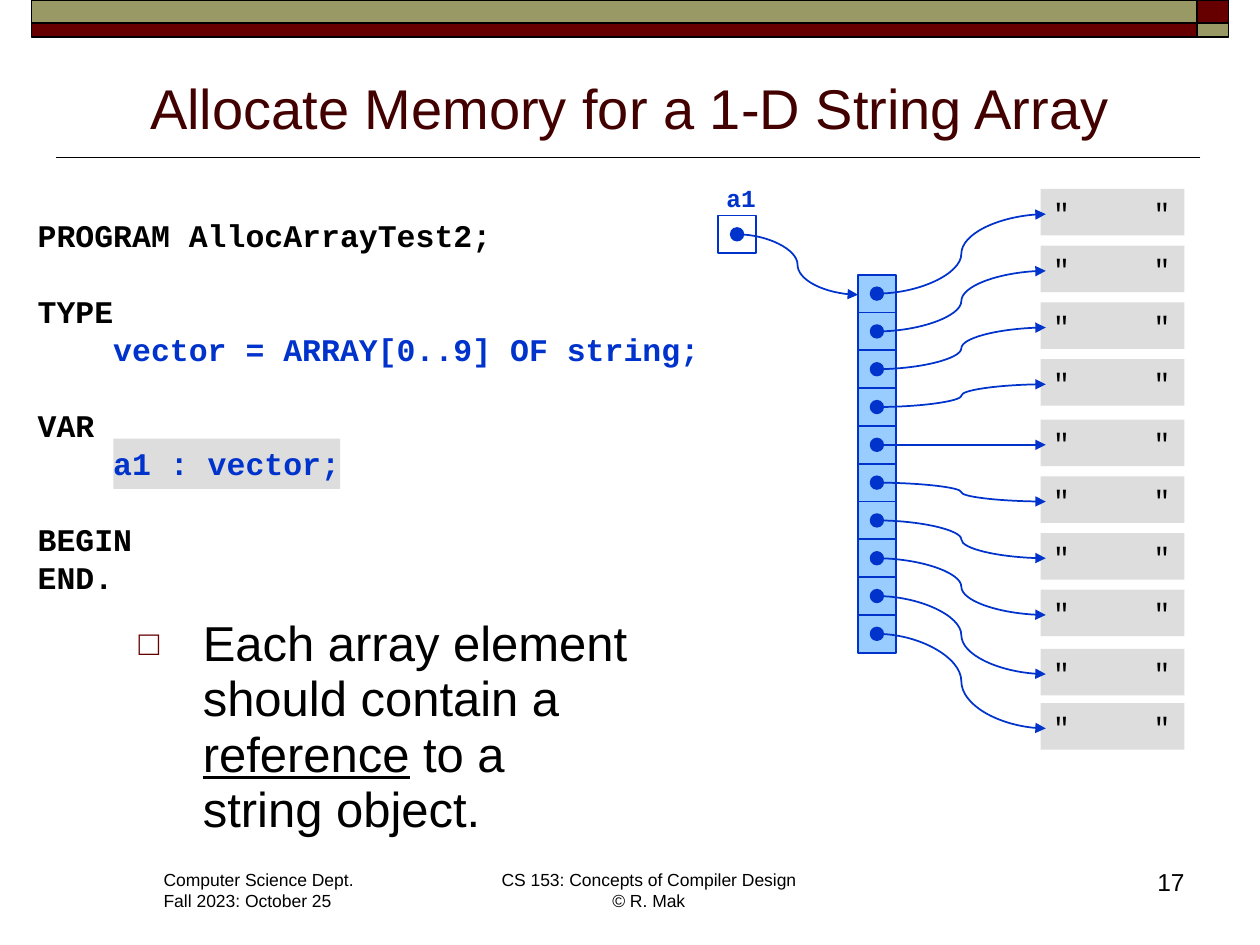
from lxml import etree
from pptx import Presentation
from pptx.dml.color import RGBColor
from pptx.enum.shapes import MSO_CONNECTOR, MSO_SHAPE
from pptx.enum.text import MSO_ANCHOR, MSO_AUTO_SIZE, PP_ALIGN
from pptx.oxml.ns import qn
from pptx.util import Pt

RECT, OVAL = MSO_SHAPE.RECTANGLE, MSO_SHAPE.OVAL
STRAIGHT, CURVE = MSO_CONNECTOR.STRAIGHT, MSO_CONNECTOR.CURVE
TOP, BOTTOM = MSO_ANCHOR.TOP, MSO_ANCHOR.BOTTOM
LEFT, CENTER, RIGHT = PP_ALIGN.LEFT, PP_ALIGN.CENTER, PP_ALIGN.RIGHT
NO_AUTOSIZE = MSO_AUTO_SIZE.NONE

SANS, MONO = "Arial", "Courier New"
BLACK, MAROON, DARK_MAROON, OLIVE = "000000", "660000", "420000", "999966"
BLUE, LIGHT_BLUE, GRAY = "0033CC", "99CCFF", "DDDDDD"

CELL = 21.6
DOT = 7.2
CODE_PITCH = 21.7

# Each statement line: indented, blank line above
CODE = [
    ("PROGRAM AllocArrayTest2;", False, False),
    ("TYPE", False, True),
    ("vector = ARRAY[0..9] OF string;", True, False),
    ("VAR", False, True),
    ("a1 : vector;", True, False),
    ("BEGIN", False, True),
    ("END.", False, False),
]


def rgb(color):
    return RGBColor.from_string(color)


def style_font(font, name, size, color, bold=False):
    font.name, font.size, font.bold = name, Pt(size), bold
    font.color.rgb = rgb(color)


def place(item, left, top, width, height):
    item.left, item.top = Pt(left), Pt(top)
    item.width, item.height = Pt(width), Pt(height)


def add_box(slide, kind, left, top, width, height, fill=None, line=None):
    box = slide.shapes.add_shape(kind, Pt(left), Pt(top), Pt(width), Pt(height))
    box.shadow.inherit = False
    if fill:
        box.fill.solid()
        box.fill.fore_color.rgb = rgb(fill)
    else:
        box.fill.background()
    if line:
        box.line.color.rgb = rgb(line)
        box.line.width = Pt(1)
    else:
        box.line.fill.background()
    return box


def add_line(slide, kind, start, end, color, arrow=False):
    line = slide.shapes.add_connector(kind, *(Pt(v) for v in (*start, *end)))
    line.line.color.rgb = rgb(color)
    line.line.width = Pt(1)
    if arrow:
        etree.SubElement(line.line._get_or_add_ln(), qn("a:tailEnd"), type="triangle")
    etree.SubElement(line._element.spPr, qn("a:effectLst"))


def write(frame, text, font, size, color, align=LEFT, bold=False, wrap=False):
    frame.text = text
    frame.word_wrap = wrap
    frame.vertical_anchor = TOP
    for paragraph in frame.paragraphs:
        paragraph.alignment = align
        for run in paragraph.runs:
            style_font(run.font, font, size, color, bold)


def add_text(slide, left, top, width, height, text, font, size, color, **options):
    label = slide.shapes.add_textbox(Pt(left), Pt(top), Pt(width), Pt(height))
    write(label.text_frame, text, font, size, color, **options)
    return label.text_frame


def add_reference(slide, left, top, fill=None):
    """Draw a cell with its dot and return the dot's centre."""
    add_box(slide, RECT, left, top, CELL, CELL, fill, BLUE)
    inset = (CELL - DOT) / 2
    add_box(slide, OVAL, left + inset, top + inset, DOT, DOT, BLUE, BLUE)
    return left + CELL / 2, top + CELL / 2


def add_header(slide):
    for left, width, upper, lower in ((18, 666, OLIVE, MAROON), (684, 18, MAROON, OLIVE)):
        add_box(slide, RECT, left, 0, width, 13, upper, BLACK)
        add_box(slide, RECT, left, 13, width, 8, lower, BLACK)
    add_line(slide, STRAIGHT, (686, 90), (32, 90), BLACK)


def fill_title(title):
    place(title, 36, 32.4, 648, 51.8)
    write(title.text_frame, "Allocate Memory for a 1-D String Array",
          SANS, 32, DARK_MAROON, align=CENTER, wrap=True)
    title.text_frame.vertical_anchor = BOTTOM
    title.text_frame.auto_size = NO_AUTOSIZE


def fill_body(body):
    place(body, 72, 349.2, 302.4, 136.8)
    body.text_frame.auto_size = NO_AUTOSIZE
    remark = body.text_frame.paragraphs[0]
    remark.line_spacing = 0.94
    remark.space_before = Pt(0)
    # Hollow square bullet with hanging indent
    props = remark._p.get_or_add_pPr()
    props.set("marL", str(Pt(36.7)))
    props.set("indent", str(-Pt(36.7)))
    bullet_color = etree.SubElement(props, qn("a:buClr"))
    etree.SubElement(bullet_color, qn("a:srgbClr"), val=MAROON)
    etree.SubElement(props, qn("a:buSzPct"), val="70000")
    etree.SubElement(props, qn("a:buFont"), typeface=SANS)
    etree.SubElement(props, qn("a:buChar"), char="□")

    remark.text = "Each array element should contain a "
    remark.add_run().text = "reference"
    remark.add_run().text = " to a "
    remark.add_line_break()
    remark.add_run().text = "string object."
    for run in remark.runs:
        style_font(run.font, SANS, 28, BLACK)
    remark.runs[1].font.underline = True


def add_code(slide):
    add_box(slide, RECT, 64.8, 250.6, 129.6, 28.8, GRAY)
    text = "\n".join("    " * indented + line for line, indented, _ in CODE)
    listing = add_text(slide, 14.4, 120, 394.6, 225.4, text, MONO, 18, BLACK, bold=True)
    for paragraph, (_, indented, gap) in zip(listing.paragraphs, CODE):
        paragraph.line_spacing = Pt(CODE_PITCH)
        if gap:
            paragraph.space_before = Pt(CODE_PITCH)
        if indented:
            paragraph.runs[0].font.color.rgb = rgb(BLUE)


def add_memory_diagram(slide):
    array_left, array_top = 490.3, 157
    # String objects come in two runs of four, then two single ones
    string_tops = [start + 32.4 * i for start in (108, 239.8) for i in range(4)]
    string_tops += [370.8, 401.8]

    for top in string_tops:
        string = add_box(slide, RECT, 594.7, top, 82.1, 26.6, GRAY)
        write(string.text_frame, '"     "', MONO, 16, BLACK)
    dots = [add_reference(slide, array_left, array_top + CELL * i, LIGHT_BLUE)
            for i in range(len(string_tops))]
    for dot, top in zip(dots, string_tops):
        target = (597.6, top + 14.4)
        level = abs(target[1] - dot[1]) < 1
        if level:
            target = (target[0], dot[1])
        add_line(slide, STRAIGHT if level else CURVE, dot, target, BLUE, arrow=True)

    # Variable a1 pointing at the array
    add_text(slide, 408, 100.8, 31, 23.8, "a1", MONO, 14, BLUE, bold=True)
    variable = add_reference(slide, 410.4, 123.1)
    add_line(slide, CURVE, variable, (array_left, 168.4), BLUE, arrow=True)


def add_footer(slide):
    add_text(slide, 86.4, 493.2, 123.8, 31.7,
             "Computer Science Dept.\nFall 2023: October 25", SANS, 10, BLACK)
    add_text(slide, 278.6, 493.2, 184.3, 31.7,
             "CS 153: Concepts of Compiler Design\v© R. Mak", SANS, 10, BLACK, align=CENTER)
    add_text(slide, 633.6, 491.8, 50.4, 36, "17", SANS, 14, BLACK, align=RIGHT, wrap=True)


def main():
    deck = Presentation()
    deck.slide_width, deck.slide_height = Pt(720), Pt(540)
    slide = deck.slides.add_slide(deck.slide_layouts[1])
    add_header(slide)
    fill_title(slide.shapes.title)
    fill_body(slide.placeholders[1])
    add_code(slide)
    add_memory_diagram(slide)
    add_footer(slide)
    deck.save("out.pptx")


if __name__ == "__main__":
    main()
